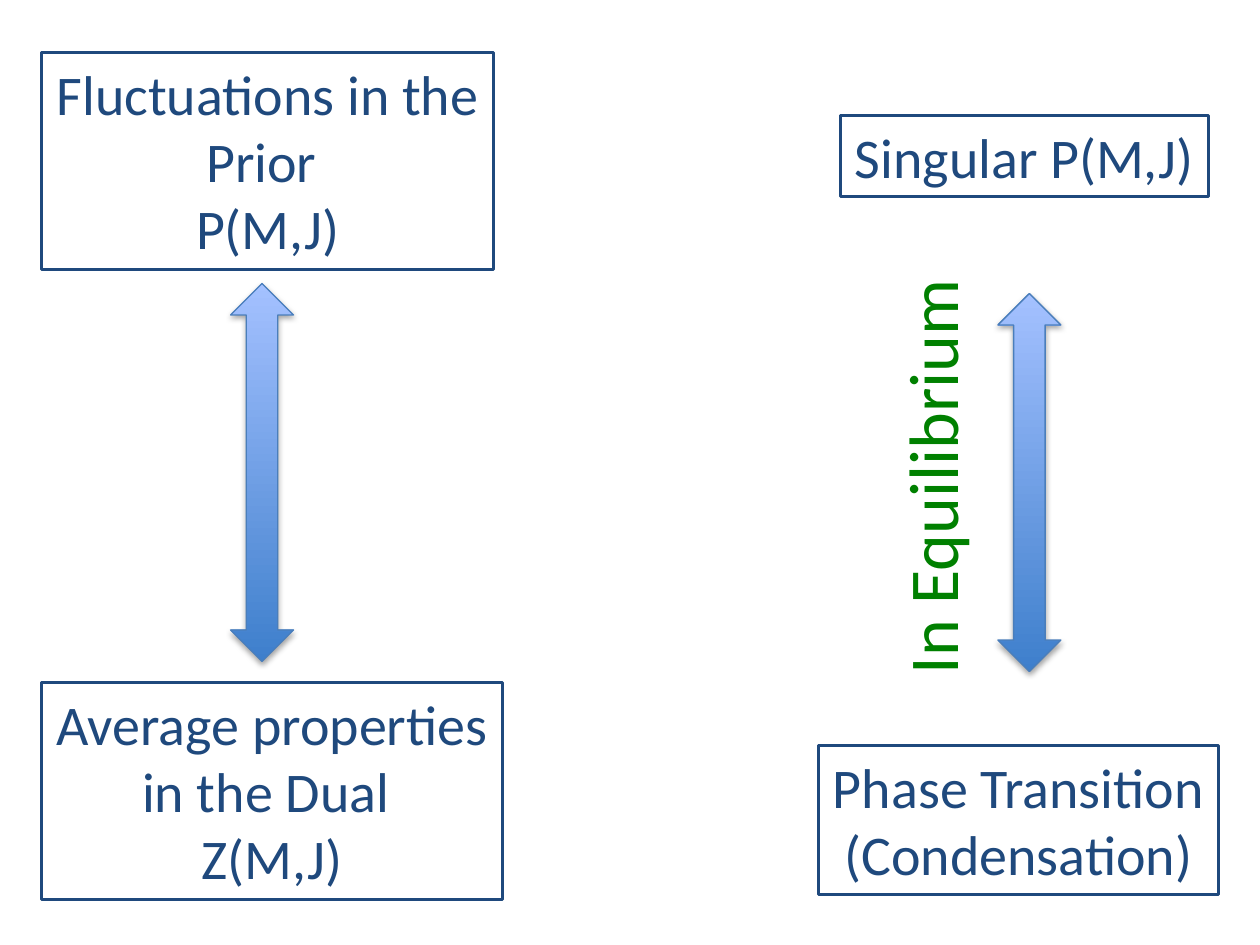
from dataclasses import dataclass

from pptx import Presentation
from pptx.dml.color import RGBColor
from pptx.enum.shapes import MSO_SHAPE
from pptx.enum.text import MSO_AUTO_SIZE, PP_ALIGN
from pptx.util import Emu, Pt

PX = 9144
COLORS = {"navy": "1F497D", "green": "008000"}


@dataclass(frozen=True)
class Label:
    x: int
    y: int
    w: int
    h: int
    lines: tuple[str, ...]
    size: int = 32
    color: str = "navy"
    align: PP_ALIGN = PP_ALIGN.CENTER
    framed: bool = True
    rotation: int = 0


@dataclass(frozen=True)
class Arrow:
    x: int
    y: int
    w: int = 50
    h: int = 300


LABELS = (
    Label(33, 42, 359, 172, ("Fluctuations in the ", "Prior ", "P(M,J)")),
    Label(33, 542, 366, 172, ("Average properties ", "in the Dual ", "Z(M,J)")),
    Label(667, 92, 292, 64, ("Singular P(M,J)",)),
    Label(650, 592, 317, 118, ("Phase Transition", "(Condensation)")),
    Label(570, 338, 337, 77, ("In Equilibrium",), 40, "green",
          PP_ALIGN.LEFT, False, 270),
)
ARROWS = (Arrow(183, 225), Arrow(792, 233))


def px(*lengths: int) -> list[Emu]:
    return [Emu(n * PX) for n in lengths]


def rgb(name: str) -> RGBColor:
    return RGBColor.from_string(COLORS[name])


def draw_label(s, label: Label) -> None:
    sp = s.shapes.add_textbox(*px(label.x, label.y, label.w, label.h))
    sp.rotation = label.rotation
    if label.framed:
        sp.line.color.rgb = rgb(label.color)
        sp.line.width = Pt(1.75)
    tf = sp.text_frame
    tf.word_wrap = False
    tf.auto_size = MSO_AUTO_SIZE.SHAPE_TO_FIT_TEXT
    tf.text = "\n".join(label.lines)
    for p in tf.paragraphs:
        p.alignment = label.align
        p.font.name = "Calibri"
        p.font.size = Pt(label.size)
        p.font.color.rgb = rgb(label.color)


def draw_arrow(s, arrow: Arrow) -> None:
    s.shapes.add_shape(MSO_SHAPE.UP_DOWN_ARROW,
                       *px(arrow.x, arrow.y, arrow.w, arrow.h))


def main() -> None:
    prs = Presentation()
    prs.slide_width, prs.slide_height = px(1000, 750)
    s = prs.slides.add_slide(prs.slide_layouts.get_by_name("Blank"))
    for arrow in ARROWS:
        draw_arrow(s, arrow)
    for label in LABELS:
        draw_label(s, label)
    prs.save("out.pptx")


if __name__ == "__main__":
    main()
